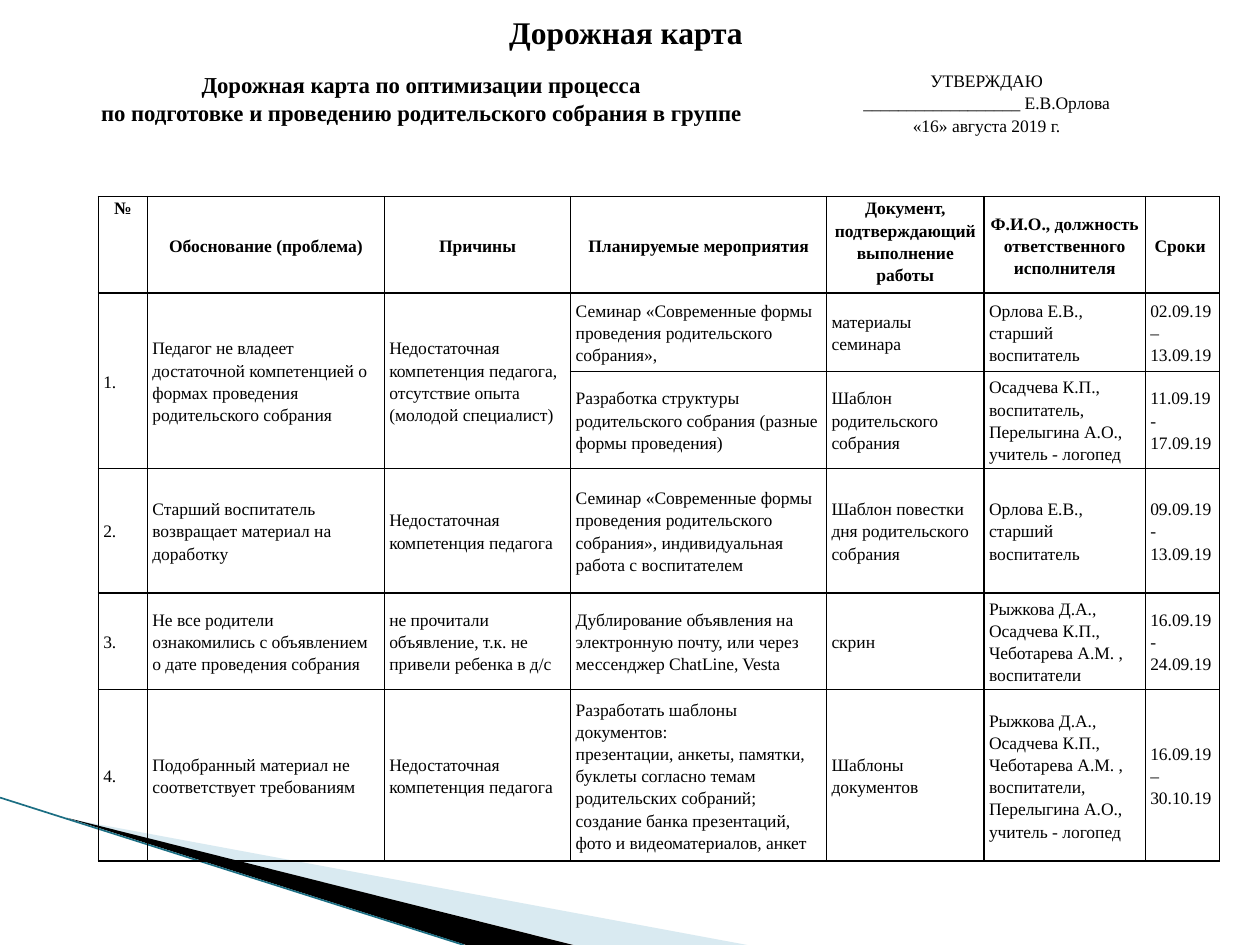
from lxml.etree import SubElement
from pptx import Presentation
from pptx.dml.color import RGBColor
from pptx.enum.shapes import MSO_CONNECTOR
from pptx.enum.text import MSO_ANCHOR, PP_ALIGN
from pptx.oxml.ns import qn
from pptx.util import Inches, Pt

FONT = "Times New Roman"
INK = "000000"
MIDDLE, TOP = MSO_ANCHOR.MIDDLE, MSO_ANCHOR.TOP
CENTER, LEFT = PP_ALIGN.CENTER, PP_ALIGN.LEFT

APPROVAL = ["Дорожная карта по оптимизации процесса\n"
            "по подготовке и проведению родительского собрания в группе",
            "УТВЕРЖДАЮ\n__________________ Е.В.Орлова\n«16» августа 2019 г."]
COLUMNS = [0.39, 1.88, 1.48, 2.03, 1.25, 1.28, 0.59]
ROWS = [0.76, 0.62, 0.77, 0.99, 0.76, 1.36]
PLAN = [
    ["№", "Обоснование (проблема)", "Причины", "Планируемые мероприятия",
     "Документ, подтверждающий выполнение работы",
     "Ф.И.О., должность ответственного исполнителя", "Сроки "],
    ["1.", "Педагог не владеет достаточной компетенцией о формах проведения родительского собрания",
     "Недостаточная компетенция педагога, отсутствие опыта (молодой специалист)",
     "Семинар «Современные формы проведения родительского собрания»,",
     "материалы семинара", "Орлова Е.В., старший воспитатель", "02.09.19 – 13.09.19"],
    [None, None, None, "Разработка структуры родительского собрания (разные формы проведения)",
     "Шаблон родительского собрания",
     "Осадчева К.П., воспитатель, Перелыгина А.О., учитель - логопед", "11.09.19-17.09.19"],
    ["2.", "Старший воспитатель возвращает материал на доработку",
     "Недостаточная компетенция педагога",
     "Семинар «Современные формы проведения родительского собрания», "
     "индивидуальная работа с воспитателем",
     "Шаблон повестки дня родительского собрания",
     "Орлова Е.В., старший воспитатель", "09.09.19-13.09.19"],
    ["3.", "Не все родители ознакомились с объявлением о дате проведения собрания",
     "не прочитали объявление, т.к. не привели ребенка в д/с",
     "Дублирование объявления на электронную почту, или через мессенджер ChatLine, Vesta",
     "скрин", "Рыжкова Д.А., Осадчева К.П., Чеботарева А.М. , воспитатели",
     "16.09.19-24.09.19"],
    ["4.", "Подобранный материал не соответствует требованиям",
     "Недостаточная компетенция педагога",
     "Разработать шаблоны документов:\n"
     "презентации, анкеты, памятки, буклеты согласно темам родительских собраний;\n"
     "создание банка презентаций, фото и видеоматериалов, анкет",
     "Шаблоны документов",
     "Рыжкова Д.А., Осадчева К.П., Чеботарева А.М. , воспитатели, "
     "Перелыгина А.О., учитель - логопед", "16.09.19 – 30.10.19"],
]


def color(code):
    """Turn a hex string into a colour."""
    return RGBColor.from_string(code)


class Slide:
    """Holds the text style and the current slide."""

    def __init__(self, page, font, ink):
        """Remember the slide and its style."""
        self.page, self.font, self.ink = page, font, ink

    def set_text(self, frame, text, size, bold, align, spacing=None):
        """Fill a text frame, one paragraph per line."""
        frame.text = text
        for para in frame.paragraphs:
            para.alignment = align
            para.line_spacing = spacing
            para.font.name, para.font.size, para.font.bold = self.font, Pt(size), bold
            para.font.color.rgb = color(self.ink)

    def wedge(self, points, fill, opacity=None):
        """Draw a filled polygon."""
        corners = [(Inches(x), Inches(y)) for x, y in points]
        builder = self.page.shapes.build_freeform(*corners[0])
        builder.add_line_segments(corners[1:], close=True)
        shape = builder.convert_to_shape()
        shape.shadow.inherit = False
        shape.fill.solid()
        shape.fill.fore_color.rgb = color(fill)
        shape.line.fill.background()
        if opacity:
            tone = next(shape._element.iter(qn("a:srgbClr")))
            SubElement(tone, qn("a:alpha"), val=str(opacity * 1000))

    def line(self, start, end, code, width):
        """Draw a straight line."""
        ends = [Inches(value) for value in (*start, *end)]
        connector = self.page.shapes.add_connector(MSO_CONNECTOR.STRAIGHT, *ends)
        connector.line.color.rgb = color(code)
        connector.line.width = Pt(width)
        SubElement(connector._element.spPr, qn("a:effectLst"))

    def title(self, text, place, size):
        """Add the centred heading."""
        box = self.page.shapes.add_textbox(*map(Inches, place))
        box.text_frame.word_wrap = False
        box.text_frame.vertical_anchor = MIDDLE
        self.set_text(box.text_frame, text, size, True, CENTER)

    def table(self, left, top, columns, rows):
        """Add an unstyled table with the given column and row sizes."""
        place = map(Inches, (left, top, sum(columns), sum(rows)))
        table = self.page.shapes.add_table(len(rows), len(columns), *place).table
        table.first_row = table.horz_banding = False
        for column, width in zip(table.columns, columns):
            column.width = Inches(width)
        for row, height in zip(table.rows, rows):
            row.height = Inches(height)
        return table

    def cell(self, cell, text, size, bold, align, anchor, margin, border=None):
        """Fill one table cell; a border is a width in points."""
        cell.margin_left = cell.margin_right = Inches(margin)
        cell.margin_top = cell.margin_bottom = 0
        cell.vertical_anchor = anchor
        for side in ("lnL", "lnR", "lnT", "lnB"):
            edge = SubElement(cell._tc.get_or_add_tcPr(), qn(f"a:{side}"), w=str(Pt(border or 0)))
            if border:
                SubElement(SubElement(edge, qn("a:solidFill")), qn("a:srgbClr"), val=self.ink)
            else:
                SubElement(edge, qn("a:noFill"))
        cell.fill.background()
        if text:
            self.set_text(cell.text_frame, text, size, bold, align, 1.15)


def main():
    """Build the road map slide."""
    deck = Presentation()
    deck.slide_width, deck.slide_height = Inches(10), Inches(7.5)
    slide = Slide(deck.slides.add_slide(deck.slide_layouts[6]), FONT, INK)

    slide.wedge([(0.55, 6.5), (5.93, 7.5), (4.56, 7.5)], "A0CBDC", 40)
    slide.wedge([(0.53, 6.49), (4.55, 7.5), (3.7, 7.5)], INK)
    slide.line((0, 6.33), (3.68, 7.5), "1B6E83", 0.95)

    approval = slide.table(0.62, 0.55, [5.44, 3.54], [0.63])
    for column, (text, size) in enumerate(zip(APPROVAL, (13, 10))):
        slide.cell(approval.cell(0, column), text, size, column == 0, CENTER, TOP, 0.07)

    slide.title("Дорожная карта ", (0, 0, 10, 0.5), 18)

    plan = slide.table(0.78, 1.56, COLUMNS, ROWS)
    for row, texts in enumerate(PLAN):
        header = row == 0
        for column, text in enumerate(texts):
            anchor = TOP if header and column in (0, 4) else MIDDLE
            slide.cell(plan.cell(row, column), text, 10, header,
                       CENTER if header else LEFT, anchor, 0.04, 1)
    for column in range(3):
        plan.cell(1, column).merge(plan.cell(2, column))
    deck.save("out.pptx")


if __name__ == "__main__":
    main()
